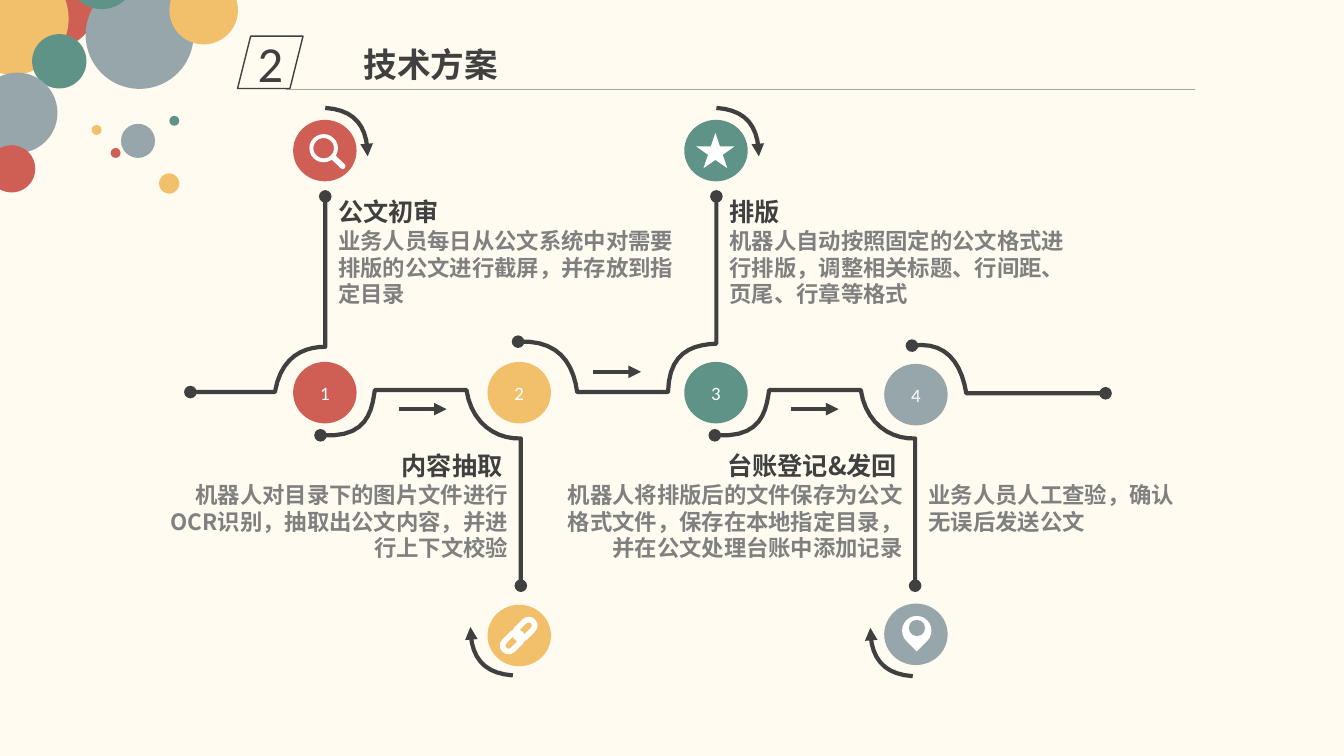
from lxml import etree
from pptx import Presentation
from pptx.dml.color import RGBColor
from pptx.enum.shapes import MSO_CONNECTOR as Link, MSO_SHAPE as Kind
from pptx.enum.text import MSO_ANCHOR as Anchor, PP_ALIGN as Align
from pptx.oxml.ns import qn
from pptx.util import Cm, Pt

rgb = RGBColor.from_string
RED, GOLD, GREEN, GREY = "CF5F55", "F2C06B", "5F9387", "97A6AB"
DARK, MID, WHITE = "404040", "808080", "FFFFFF"
HAN = "Noto Sans CJK SC"


def paint(part, fill=None, line=None, width=3, head=None, tail=None):
    """Set fill, outline and line ends, and drop the shadow."""
    if fill:
        part.fill.solid()
        part.fill.fore_color.rgb = rgb(fill)
    elif hasattr(part, "fill"):
        part.fill.background()
    if line:
        part.line.color.rgb = rgb(line)
        part.line.width = Pt(width)
    else:
        part.line.fill.background()
    props = part.element.spPr
    edge = props.find(qn("a:ln"))
    for tag, end in (("a:headEnd", head), ("a:tailEnd", tail)):
        if end:
            etree.SubElement(edge, qn(tag), type=end)
    if props.find(qn("a:effectLst")) is None:
        etree.SubElement(props, qn("a:effectLst"))
    return part


def write(part, rows, align, wrap=True, **frame):
    """Fill a text frame; each row is a text, a colour and a font dict."""
    box = part.text_frame
    box.word_wrap = wrap
    for key, val in frame.items():
        setattr(box, key, val)
    for i, (text, color, style) in enumerate(rows):
        para = box.add_paragraph() if i else box.paragraphs[0]
        para.alignment = align
        run = para.add_run()
        run.text = text
        for key, val in style.items():
            setattr(run.font, key, val)
        run.font.color.rgb = rgb(color)
        if style["name"] == HAN:
            etree.SubElement(run.font._element, qn("a:ea"), typeface=HAN)


deck = Presentation()
deck.slide_width, deck.slide_height = Cm(33.88), Cm(19.05)
slide = deck.slides.add_slide(deck.slide_layouts[6])
slide.background.fill.solid()
slide.background.fill.fore_color.rgb = rgb("FFFBF0")
shapes = slide.shapes

# Corner bubbles: left, top, diameter
bubbles = [
    (0.1, -1.12, 2.36, RED), (-1.09, -0.94, 2.82, GOLD),
    (0.81, 0.86, 1.37, GREEN), (-0.58, 1.83, 2.03, GREY),
    (2.16, -0.48, 2.72, GREY), (1.7, -1.5, 1.73, GREEN),
    (-0.3, 3.66, 1.19, RED), (3.05, 3.12, 0.86, GREY),
    (2.79, 3.73, 0.25, RED), (2.31, 3.15, 0.25, GOLD),
    (4.27, 2.92, 0.25, GREEN), (4.01, 4.37, 0.51, GOLD),
    (4.27, -0.61, 1.73, GOLD),
]
for x, y, d, color in bubbles:
    paint(shapes.add_shape(Kind.OVAL, Cm(x), Cm(y), Cm(d), Cm(d)), color)

# Heading
rule = shapes.add_connector(Link.STRAIGHT, Cm(7.21), Cm(2.24), Cm(30.12), Cm(2.24))
paint(rule, line="A6A6A6", width=0.5)
badge = shapes.add_shape(Kind.PARALLELOGRAM, Cm(5.99), Cm(0.91), Cm(1.65), Cm(1.32))
paint(badge, line=DARK, width=1)
flush = dict(margin_left=0, margin_right=0, margin_top=0, margin_bottom=0,
             vertical_anchor=Anchor.MIDDLE)
write(badge, [("2", DARK, dict(size=Pt(36), name="Calibri"))],
      Align.CENTER, wrap=False, **flush)
title = shapes.add_textbox(Cm(8.92), Cm(0.97), Cm(13.03), Cm(1.27))
write(title, [("技术方案", DARK, dict(size=Pt(24), name=HAN, bold=True))], Align.LEFT)

# Route and swirls: two numbers make a line, six make a curve
dots = dict(head="oval", tail="oval")
tip = dict(tail="triangle")
dip = [(0, 0), (1.19, 0.08, 1.29, -0.61, 1.37, -1.14), (3.68, -1.14),
       (3.81, -0.3, 4.42, 0.1, 5.05, 0.08), (5.05, 3.79)]
swirl = [(0, 0), (0.76, 0.05, 1.07, 0.48, 1.07, 1.22)]
tracks = [
    (4.8, 9.88, 1, dots, [(0, 0), (2.13, 0), (2.29, -0.91, 2.87, -1.14, 3.4, -1.14),
                          (3.4, -4.93)]),
    (8.08, 10.97, 1, dots, dip),
    (13.06, 8.61, 1, dots, [(0, 0), (1.01, -0.05, 1.39, 0.53, 1.49, 1.27),
                            (3.78, 1.27), (3.81, 0.28, 4.36, 0.08, 5, 0.05),
                            (5, -3.66)]),
    (22.99, 8.71, 1, dots, [(0, 0), (0.84, -0.12, 1.24, 0.41, 1.37, 1.2),
                            (4.88, 1.2)]),
    (18.02, 10.97, 1, dots, dip),
    (8.2, 2.72, 1, tip, swirl), (18.06, 2.72, 1, tip, swirl),
    (12.93, 17.02, -1, tip, swirl), (23.01, 17.04, -1, tip, swirl),
]
for left, top, sign, ends, steps in tracks:
    dense = [steps[0]]
    for step in steps[1:]:
        if len(step) == 2:
            dense.append(step)
            continue
        knots = [dense[-1], step[:2], step[2:4], step[4:]]
        for n in range(1, 11):
            t = n / 10
            mix = ((1 - t) ** 3, 3 * t * (1 - t) ** 2, 3 * t * t * (1 - t), t ** 3)
            dense.append(tuple(sum(m * k[a] for m, k in zip(mix, knots))
                               for a in (0, 1)))
    points = [(Cm(left + sign * x), Cm(top + sign * y)) for x, y in dense]
    form = shapes.build_freeform(*points[0], scale=1.0)
    form.add_line_segments(points[1:], close=False)
    paint(form.convert_to_shape(), line=DARK, **ends)

# Arrows between the stages
for x, y in ((10.06, 10.31), (14.96, 9.37), (19.94, 10.31)):
    arrow = shapes.add_connector(Link.STRAIGHT, Cm(x), Cm(y), Cm(x + 1.2), Cm(y))
    paint(arrow, line=DARK, **tip)

# Numbered stages and their icon discs
stages = [(7.39, 9.12, 3.02, RED), (12.29, 9.12, 15.24, GOLD),
          (17.25, 9.12, 3.02, GREEN), (22.29, 9.17, 15.21, GREY)]
for num, (x, y, disc, color) in enumerate(stages, 1):
    for top, label in ((y, str(num)), (disc, "")):
        node = shapes.add_shape(Kind.OVAL, Cm(x), Cm(top), Cm(1.6), Cm(1.55))
        paint(node, color)
        if label:
            write(node, [(label, WHITE, dict(size=Pt(13.5), name="Calibri"))],
                  Align.CENTER, **flush)

# Icons: lens, star, pin with its hole, two chain links
icons = [
    (Kind.DONUT, 7.8, 3.38, 0.72, 0.71, 0, dict(fill=WHITE)),
    (Kind.STAR_5_POINT, 17.55, 3.35, 0.97, 0.89, 0, dict(fill=WHITE)),
    (Kind.TEAR, 22.74, 15.52, 0.74, 0.74, 135, dict(fill=WHITE)),
    (Kind.OVAL, 22.91, 15.62, 0.41, 0.41, 0, dict(fill=GREY)),
    (Kind.ROUNDED_RECTANGLE, 12.63, 16.02, 0.58, 0.3, -45, dict(line=WHITE, width=4)),
    (Kind.ROUNDED_RECTANGLE, 12.94, 15.71, 0.58, 0.3, -45, dict(line=WHITE, width=4)),
]
for kind, x, y, w, h, turn, look in icons:
    icon = shapes.add_shape(kind, Cm(x), Cm(y), Cm(w), Cm(h))
    icon.rotation = turn
    if kind == Kind.DONUT:
        icon.adjustments[0] = 0.14
    if kind == Kind.ROUNDED_RECTANGLE:
        icon.adjustments[0] = 0.5
    paint(icon, **look)
grip = shapes.add_connector(Link.STRAIGHT, Cm(8.4), Cm(3.96), Cm(8.64), Cm(4.19))
paint(grip, line=WHITE, width=4)
grip.element.spPr.find(qn("a:ln")).set("cap", "rnd")

# Stage notes
notes = [
    (8.28, 4.83, 9.4, 3.07, Align.LEFT, "公文初审",
     "业务人员每日从公文系统中对需要排版的公文进行截屏，并存放到指定目录"),
    (18.14, 4.83, 9.4, 3.07, Align.LEFT, "排版",
     "机器人自动按照固定的公文格式进行排版，调整相关标题、行间距、页尾、行章等格式"),
    (13.61, 11.23, 9.4, 3.07, Align.RIGHT, "台账登记&发回 ",
     "机器人将排版后的文件保存为公文格式文件，保存在本地指定目录，并在公文处理台账中添加记录"),
    (3.66, 11.23, 9.4, 3.07, Align.RIGHT, "内容抽取 ",
     "机器人对目录下的图片文件进行OCR识别，抽取出公文内容，并进行上下文校验"),
    (23.16, 12.01, 7.06, 1.63, Align.LEFT, "",
     "业务人员人工查验，确认无误后发送公文"),
]
for x, y, w, h, align, head, body in notes:
    rows = [(body, MID, dict(size=Pt(16), name=HAN, bold=True))]
    if head:
        rows.insert(0, (head, DARK, dict(size=Pt(18), name=HAN, bold=True)))
    write(shapes.add_textbox(Cm(x), Cm(y), Cm(w), Cm(h)), rows, align)

deck.save("out.pptx")
